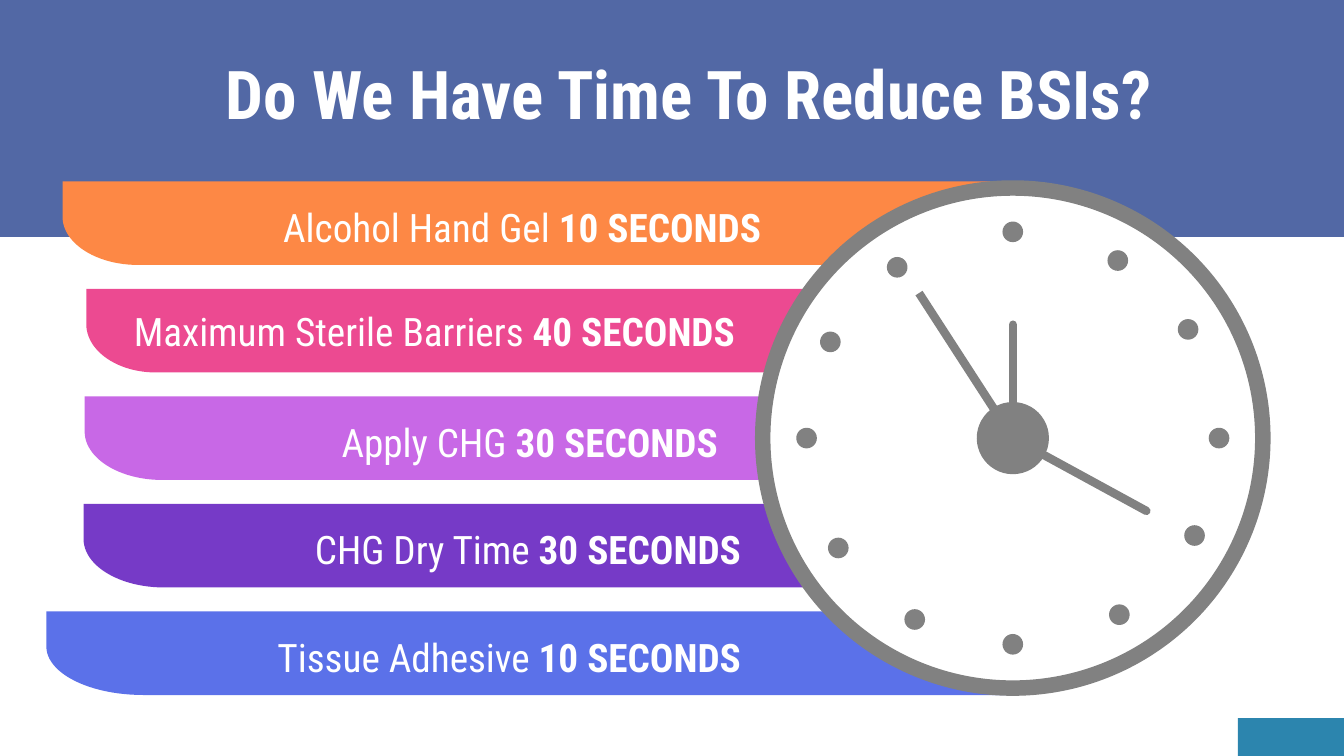
from dataclasses import dataclass
from math import cos, pi, radians, sin

from lxml import etree
from pptx import Presentation
from pptx.dml.color import RGBColor
from pptx.enum.shapes import MSO_CONNECTOR, MSO_SHAPE
from pptx.enum.text import MSO_ANCHOR, MSO_AUTO_SIZE, PP_ALIGN
from pptx.oxml.ns import qn
from pptx.util import Inches, Pt

RECTANGLE, OVAL, DONUT = MSO_SHAPE.RECTANGLE, MSO_SHAPE.OVAL, MSO_SHAPE.DONUT
STRAIGHT = MSO_CONNECTOR.STRAIGHT
CENTER, RIGHT = PP_ALIGN.CENTER, PP_ALIGN.RIGHT
MIDDLE = MSO_ANCHOR.MIDDLE
NO_AUTOFIT = MSO_AUTO_SIZE.NONE

WIDTH, HEIGHT = Inches(13.333), Inches(7.5)


@dataclass(frozen=True)
class Theme:
    font: str = "Roboto Condensed"
    title_size: int = 48
    label_size: int = 28
    hand_width: int = 6
    white: str = "FFFFFF"
    band: str = "5268A5"
    accent: str = "2C85AE"
    clock: str = "818181"


@dataclass(frozen=True)
class Step:
    label: str
    time: str
    color: str
    left: float
    corner: float
    text_right: float
    text_left: float = 10.65
    text_drop: float = 1.9


THEME = Theme()

STEPS = [
    Step("Alcohol Hand Gel ", "10 SECONDS", "FD8845", 4.65, 5.63, 57.6),
    Step("Maximum Sterile Barriers ", "40 SECONDS", "EC4A91", 6.42, 5.18, 55.65, 6.15, 1.5),
    Step("Apply CHG ", "30 SECONDS", "C868E6", 6.3, 5.78, 54.38),
    Step("CHG Dry Time ", "30 SECONDS", "763AC7", 6.22, 6, 56.1),
    Step("Tissue Adhesive ", "10 SECONDS", "5B71E9", 3.45, 7.2, 56.1),
]
FIRST_BAR, BAR_PITCH, BAR_HEIGHT = 24, 14.22, 11.05
CORNER_SHARE, CORNER_STEPS = 0.58, 24
LABEL_HEIGHT = 7.2

CLOCK_X, CLOCK_Y, CLOCK_RADIUS = 75.36, 57.95, 34.1
FACE, HUB, DOT, DIAL = 0.95, 0.14, 0.04, 0.8
DOT_ANGLES = [0, 30.6, 58.2, 90, 118.2, 148.9, 180, 208.4, 237.8, 270, 297.8, 325.9]


def across(percent):
    return round(WIDTH * percent / 100)


def down(percent):
    return round(HEIGHT * percent / 100)


def clock_point(angle, distance):
    reach = down(CLOCK_RADIUS) * distance
    turn = radians(angle)
    return round(across(CLOCK_X) + reach * sin(turn)), round(down(CLOCK_Y) - reach * cos(turn))


def paint(shape, color):
    shape.shadow.inherit = False
    shape.fill.solid()
    shape.fill.fore_color.rgb = RGBColor.from_string(color)
    shape.line.fill.background()


def add_block(slide, left, top, width, height, color):
    block = slide.shapes.add_shape(RECTANGLE, across(left), down(top), across(width), down(height))
    paint(block, color)


def set_text(shape, runs, size, alignment, line_spacing=None):
    frame = shape.text_frame
    frame.word_wrap = True
    frame.auto_size = NO_AUTOFIT
    frame.vertical_anchor = MIDDLE
    frame.margin_left = frame.margin_right = Inches(0.13)
    frame.margin_top = frame.margin_bottom = Inches(0.13)
    paragraph = frame.paragraphs[0]
    paragraph.alignment = alignment
    if line_spacing:
        paragraph.line_spacing = line_spacing
    paragraph.font.name = THEME.font
    paragraph.font.size = Pt(size)
    paragraph.font.color.rgb = RGBColor.from_string(THEME.white)
    for text, bold in runs:
        run = paragraph.add_run()
        run.text = text
        run.font.bold = bold


def add_title(slide, text):
    title = slide.shapes.title
    title.left, title.top = across(13.35), down(6.8)
    title.width, title.height = across(75.83), down(10.8)
    title.element.getparent().append(title.element)
    set_text(title, [(text, True)], THEME.title_size, CENTER)


def add_bar(slide, step, top):
    left, right, bottom = step.left, CLOCK_X, top + BAR_HEIGHT
    corner_height = BAR_HEIGHT * CORNER_SHARE
    turns = [pi / 2 * index / CORNER_STEPS for index in range(CORNER_STEPS + 1)]
    curve = [
        (left + step.corner * (1 - cos(turn)), bottom - corner_height * (1 - sin(turn)))
        for turn in turns
    ]
    outline = curve + [(right, bottom), (right, top)]
    builder = slide.shapes.build_freeform(across(left), down(top))
    builder.add_line_segments([(across(x), down(y)) for x, y in outline], close=True)
    paint(builder.convert_to_shape(), step.color)


def add_label(slide, step, top):
    label = slide.shapes.add_textbox(
        across(step.text_left), down(top + step.text_drop),
        across(step.text_right - step.text_left), down(LABEL_HEIGHT),
    )
    runs = [(step.label, False), (step.time, True)]
    set_text(label, runs, THEME.label_size, RIGHT, 1.15)


def add_round(slide, kind, center, radius, color):
    reach = round(down(CLOCK_RADIUS) * radius)
    x, y = center
    shape = slide.shapes.add_shape(kind, x - reach, y - reach, 2 * reach, 2 * reach)
    paint(shape, color)
    return shape


def add_hand(slide, angle, start, end, cap):
    hand = slide.shapes.add_connector(STRAIGHT, *clock_point(angle, start), *clock_point(angle, end))
    hand.line.color.rgb = RGBColor.from_string(THEME.clock)
    hand.line.width = Pt(THEME.hand_width)
    hand.line._get_or_add_ln().set("cap", cap)
    etree.SubElement(hand._element.spPr, qn("a:effectLst"))


def add_clock(slide):
    center = clock_point(0, 0)
    add_round(slide, OVAL, center, FACE, THEME.white)
    add_hand(slide, 327.1, 0, 0.67, "flat")
    ring = add_round(slide, DONUT, center, 1, THEME.clock)
    ring.adjustments[0] = 0.03
    add_round(slide, OVAL, center, HUB, THEME.clock)
    for angle in DOT_ANGLES:
        add_round(slide, OVAL, clock_point(angle, DIAL), DOT, THEME.clock)
    add_hand(slide, 0, HUB, 0.44, "rnd")
    add_hand(slide, 118.6, HUB, 0.59, "rnd")


def main():
    presentation = Presentation()
    presentation.slide_width, presentation.slide_height = WIDTH, HEIGHT
    slide = presentation.slides.add_slide(presentation.slide_layouts[5])
    add_block(slide, 92.1, 95, 7.9, 5, THEME.accent)
    add_block(slide, 0, 0, 100, 31.33, THEME.band)
    add_title(slide, "Do We Have Time To Reduce BSIs?")
    for index, step in enumerate(STEPS):
        top = FIRST_BAR + index * BAR_PITCH
        add_bar(slide, step, top)
        add_label(slide, step, top)
    add_clock(slide)
    presentation.save("out.pptx")


if __name__ == "__main__":
    main()
